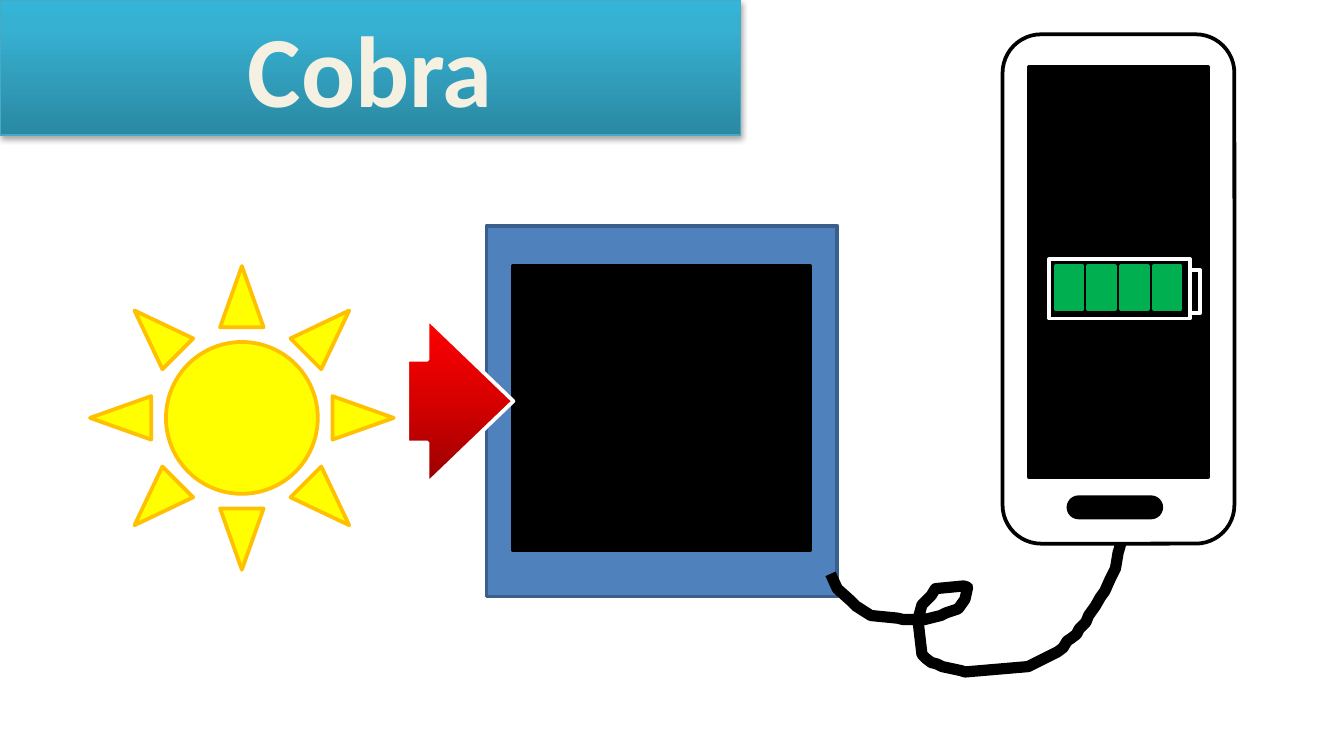
import pptx
import pptx.dml.color
import pptx.enum.shapes
import pptx.enum.text
import pptx.oxml
import pptx.oxml.ns
import pptx.util

RGB = pptx.dml.color.RGBColor
KIND = pptx.enum.shapes.MSO_SHAPE
PX = 4572
WIDE, HIGH = 2000, 1125

BLACK = RGB(0x00, 0x00, 0x00)
WHITE = RGB(0xFF, 0xFF, 0xFF)
CREAM = RGB(0xF4, 0xF1, 0xE3)
BLUE = RGB(0x4F, 0x81, 0xBD)
NAVY = RGB(0x3A, 0x5F, 0x8C)
AQUA = RGB(0x46, 0xAA, 0xC5)
YELLOW = RGB(0xFF, 0xFF, 0x00)
AMBER = RGB(0xFF, 0xC0, 0x00)
GREEN = RGB(0x00, 0xB0, 0x50)
TEALS = [(0, RGB(0x2A, 0x88, 0xA2)), (80, RGB(0x37, 0xB1, 0xD2)),
         (100, RGB(0x34, 0xB4, 0xD6))]
REDS = [(0, RGB(0x97, 0x00, 0x00)), (50, RGB(0xD7, 0x00, 0x00)),
        (100, RGB(0xFF, 0x00, 0x00))]
CURVE = [(0, 56), (5, 67), (15, 76), (19, 80), (30, 87), (50, 89), (54, 90),
         (70, 90), (82, 87), (86, 85), (95, 82), (100, 75), (102, 66),
         (99, 65), (78, 67), (75, 72), (68, 79), (65, 90), (68, 116),
         (71, 119), (75, 122), (79, 123), (83, 125), (97, 128), (100, 129),
         (147, 125), (155, 121), (163, 117), (169, 114), (173, 111),
         (176, 106), (179, 104), (183, 101), (185, 97), (190, 92), (192, 87),
         (197, 80), (201, 73), (204, 69), (208, 60), (212, 52), (214, 40),
         (215, 37), (218, 25), (219, 15), (221, 0)]


def markup(text):
    """Turn drawing markup into an element."""
    space = pptx.oxml.ns.nsdecls("a")
    return pptx.oxml.parse_xml(text.replace(" ", f" {space} ", 1))


def stroke(shape, tint, width=2):
    """Give the shape a plain line."""
    shape.line.color.rgb = tint
    shape.line.width = pptx.util.Pt(width)


def blend(shape, stops):
    """Fill the shape with colour stops that run from foot to top."""
    shape.fill.gradient()
    shape.fill.gradient_angle = 90
    chain = shape.element.spPr.find(".//" + pptx.oxml.ns.qn("a:gsLst"))
    for stop in list(chain):
        chain.remove(stop)
    for spot, tint in stops:
        chain.append(markup(f'<a:gs pos="{spot * 1000}">'
                            f'<a:srgbClr val="{tint}"/></a:gs>'))


def place(shapes, kind, box, fill, line):
    """Add a preset shape with a flat or blended fill."""
    shape = shapes.add_shape(kind, *(n * PX for n in box))
    shape.shadow.inherit = False
    if isinstance(fill, list):
        blend(shape, fill)
    else:
        shape.fill.solid()
        shape.fill.fore_color.rgb = fill
    stroke(shape, line)
    return shape


def banner(slide, box, words):
    """Set the title as a blended, shadowed banner."""
    title = slide.shapes.title
    title.left, title.top, title.width, title.height = (n * PX for n in box)
    blend(title, TEALS)
    stroke(title, AQUA, 0.75)
    glow = markup('<a:effectLst />')
    glow.append(markup(
        '<a:outerShdw blurRad="40000" dist="23000" dir="5400000" rotWithShape="0">'
        '<a:srgbClr val="000000"><a:alpha val="35000"/></a:srgbClr></a:outerShdw>'))
    title.element.spPr.append(glow)
    frame = title.text_frame
    frame.auto_size = pptx.enum.text.MSO_AUTO_SIZE.NONE
    frame.vertical_anchor = pptx.enum.text.MSO_ANCHOR.MIDDLE
    line = frame.paragraphs[0]
    line.alignment = pptx.enum.text.PP_ALIGN.CENTER
    run = line.add_run()
    run.text = words
    run.font.name = "Calibri"
    run.font.size = pptx.util.Pt(54)
    run.font.bold = True
    run.font.color.rgb = CREAM


def panel(slide, box):
    """Draw the framed solar panel."""
    x, y, w, h = box
    group = slide.shapes.add_group_shape().shapes
    place(group, KIND.RECTANGLE, box, BLUE, NAVY)
    place(group, KIND.RECTANGLE, (x + 39, y + 60, w - 79, h - 129), BLACK, BLACK)


def light(slide, box):
    """Draw the sun and the arrow of light beside it."""
    x, y, w, h = box
    place(slide.shapes, KIND.SUN, (x, y, h, h), YELLOW, AMBER)
    arrow = place(slide.shapes, KIND.RIGHT_ARROW,
                  (x + w - 158, y + 78, 158, 246), REDS, WHITE)
    arrow.adjustments[1] = 0.81


def cord(slide, box):
    """Draw the looped cord."""
    x, y = box[:2]
    pen = slide.shapes.build_freeform(*CURVE[0], scale=2 * PX)
    pen.add_line_segments(CURVE[1:], close=False)
    wire = pen.convert_to_shape(x * PX, y * PX)
    wire.shadow.inherit = False
    wire.fill.background()
    stroke(wire, BLACK, 6)


def cell(slide, box):
    """Draw the battery with its four green bars."""
    x, y, w, h = box
    group = slide.shapes.add_group_shape().shapes
    place(group, KIND.RECTANGLE, (x, y, w - 15, h), BLACK, WHITE)
    place(group, KIND.RECTANGLE, (x + w - 15, y + 16, 15, 64), BLACK, WHITE)
    bars = group.add_group_shape().shapes
    for i in range(4):
        place(bars, KIND.RECTANGLE,
              (x + 10 + round(i * 48.5), y + 10, 40, 64), GREEN, GREEN)


def phone(slide, box):
    """Draw the phone with its screen, button and battery."""
    x, y, w, h = box
    place(slide.shapes, KIND.ROUNDED_RECTANGLE, box, WHITE, BLACK)
    place(slide.shapes, KIND.RECTANGLE, (x + 39, y + 49, 267, 610), BLACK, BLACK)
    key = place(slide.shapes, KIND.ROUNDED_RECTANGLE,
                (x + 98, y + h - 69, 138, 30), BLACK, BLACK)
    key.adjustments[0] = 0.5
    cell(slide, (x + 69, y + 335, 225, 88))


def main():
    """Build the slide and save it."""
    deck = pptx.Presentation()
    deck.slide_width, deck.slide_height = WIDE * PX, HIGH * PX
    slide = deck.slides.add_slide(deck.slide_layouts[5])
    banner(slide, (0, 0, 1102, 201), "Cobra")
    panel(slide, (724, 336, 522, 552))
    light(slide, (134, 396, 630, 452))
    cord(slide, (1236, 742, 442, 258))
    phone(slide, (1492, 51, 345, 758))
    deck.save("out.pptx")


if __name__ == "__main__":
    main()
